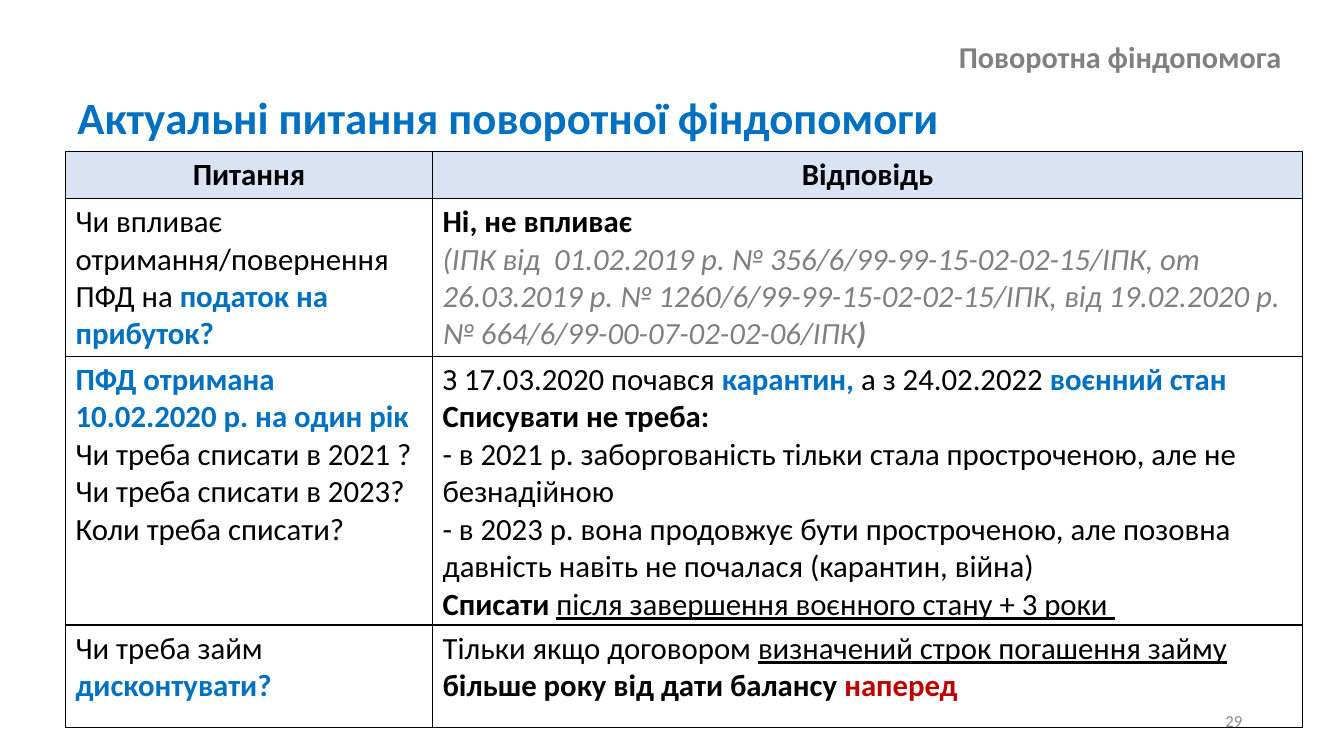
"""Builds a slide with a question and answer table on repayable financial aid."""
from dataclasses import dataclass

from lxml import etree
from pptx import Presentation
from pptx.dml.color import RGBColor
from pptx.enum.text import MSO_ANCHOR, PP_ALIGN
from pptx.oxml.ns import qn
from pptx.util import Inches, Pt

LEFT, CENTER, RIGHT = PP_ALIGN.LEFT, PP_ALIGN.CENTER, PP_ALIGN.RIGHT
TOP, MIDDLE = MSO_ANCHOR.TOP, MSO_ANCHOR.MIDDLE


@dataclass(frozen=True)
class Theme:
    """Font, colours and type sizes of the slide."""
    font: str = "Calibri"
    black: str = "000000"
    blue: str = "0070C0"
    gray: str = "808080"
    light_gray: str = "8C8C8C"
    red: str = "C00000"
    header_fill: str = "DAE3F3"
    heading: float = 32
    section: float = 21.6
    table: float = 22
    number: float = 12


theme = Theme()
STYLES = {
    "plain": {"color": theme.black},
    "bold": {"color": theme.black, "bold": True},
    "underline": {"color": theme.black, "underline": True},
    "blue": {"color": theme.blue, "bold": True},
    "red": {"color": theme.red, "bold": True},
    "gray": {"color": theme.gray, "bold": True},
    "source": {"color": theme.gray, "italic": True},
    "source_bold": {"color": theme.gray, "italic": True, "bold": True},
    "number": {"color": theme.light_gray},
}


def write(tf, paragraphs, size, align=LEFT, spacing=None):
    """Fills a text frame with paragraphs given as lists of (text, style) runs."""
    tf.word_wrap = True
    for i, runs in enumerate(paragraphs):
        p = tf.paragraphs[0] if i == 0 else tf.add_paragraph()
        p.alignment = align
        p.line_spacing = spacing
        p.font.name = theme.font
        p.font.size = Pt(size)
        for text, style in runs:
            r = p.add_run()
            r.text = text
            look = STYLES[style]
            r.font.color.rgb = RGBColor.from_string(look["color"])
            r.font.bold = look.get("bold", False)
            r.font.italic = look.get("italic", False)
            r.font.underline = look.get("underline", False)


def add_borders(cell):
    """Draws a thin black line on each side of a table cell."""
    tc_pr = cell._tc.get_or_add_tcPr()
    for i, side in enumerate(("a:lnL", "a:lnR", "a:lnT", "a:lnB")):
        ln = etree.Element(qn(side), w=str(Pt(1)))
        fill = etree.SubElement(ln, qn("a:solidFill"))
        etree.SubElement(fill, qn("a:srgbClr"), val=theme.black)
        tc_pr.insert(i, ln)


prs = Presentation()
prs.slide_width, prs.slide_height = Inches(13.33), Inches(7.5)
s = prs.slides.add_slide(prs.slide_layouts[6])

rows = [
    ([[("Питання", "bold")]], [[("Відповідь", "bold")]]),
    (
        [[("Чи впливає отримання/повернення ПФД на ", "plain"), ("податок на прибуток?", "blue")]],
        [
            [("Ні, не впливає", "bold")],
            [
                ("(ІПК від  01.02.2019 р. № 356/6/99-99-15-02-02-15/ІПК, от "
                 "26.03.2019 р. № 1260/6/99-99-15-02-02-15/ІПК, від 19.02.2020 р. "
                 "№ 664/6/99-00-07-02-02-06/ІПК", "source"),
                (")", "source_bold"),
            ],
        ],
    ),
    (
        [
            [("ПФД отримана 10.02.2020 р. на один рік", "blue")],
            [("Чи треба списати в 2021 ?", "plain")],
            [("Чи треба списати в 2023?", "plain")],
            [("Коли треба списати?", "plain")],
        ],
        [
            [("З 17.03.2020 почався ", "plain"), ("карантин,", "blue"),
             (" а з 24.02.2022 ", "plain"), ("воєнний стан", "blue")],
            [("Списувати не треба:", "bold")],
            [("- в 2021 р. заборгованість тільки стала простроченою, але не безнадійною", "plain")],
            [("- в 2023 р. вона продовжує бути простроченою, але позовна "
              "давність навіть не почалася (карантин, війна)", "plain")],
            [("Списати ", "bold"), ("після завершення воєнного стану + 3 роки ", "underline")],
        ],
    ),
    (
        [[("Чи треба займ ", "plain"), ("дисконтувати?", "blue")]],
        [[("Тільки якщо договором ", "plain"), ("визначений строк погашення займу", "underline"),
          (" ", "plain"), ("більше року від дати балансу ", "bold"), ("наперед", "red")]],
    ),
]

text_boxes = [
    ("Актуальні питання поворотної фіндопомоги", "blue", theme.heading,
     (0.67, 0.9, 12.66, 0.66), LEFT, TOP, 0.9),
    ("29", "number", theme.number, (11.78, 6.95, 0.64, 0.4), RIGHT, MIDDLE, None),
    ("Поворотна фіндопомога", "gray", theme.section,
     (9.28, 0.4, 3.53, 0.37), RIGHT, MIDDLE, 0.9),
]
for text, style, size, box, align, anchor, spacing in text_boxes:
    tf = s.shapes.add_textbox(*map(Inches, box)).text_frame
    tf.vertical_anchor = anchor
    write(tf, [[(text, style)]], size, align, spacing)

frame = s.shapes.add_table(len(rows), 2, Inches(0.65), Inches(1.5), Inches(12.27), Inches(5.41))
table = frame.table
table.first_row = table.horz_banding = False
for column, width in zip(table.columns, (3.64, 8.63)):
    column.width = Inches(width)
for row, height in zip(table.rows, (0.44, 1.46, 2.49, 1.02)):
    row.height = Inches(height)

for i, row in enumerate(rows):
    for j, paragraphs in enumerate(row):
        cell = table.cell(i, j)
        if i == 0:
            cell.fill.solid()
            cell.fill.fore_color.rgb = RGBColor.from_string(theme.header_fill)
        else:
            cell.fill.background()
        add_borders(cell)
        write(cell.text_frame, paragraphs, theme.table, CENTER if i == 0 else LEFT)

prs.save("out.pptx")
